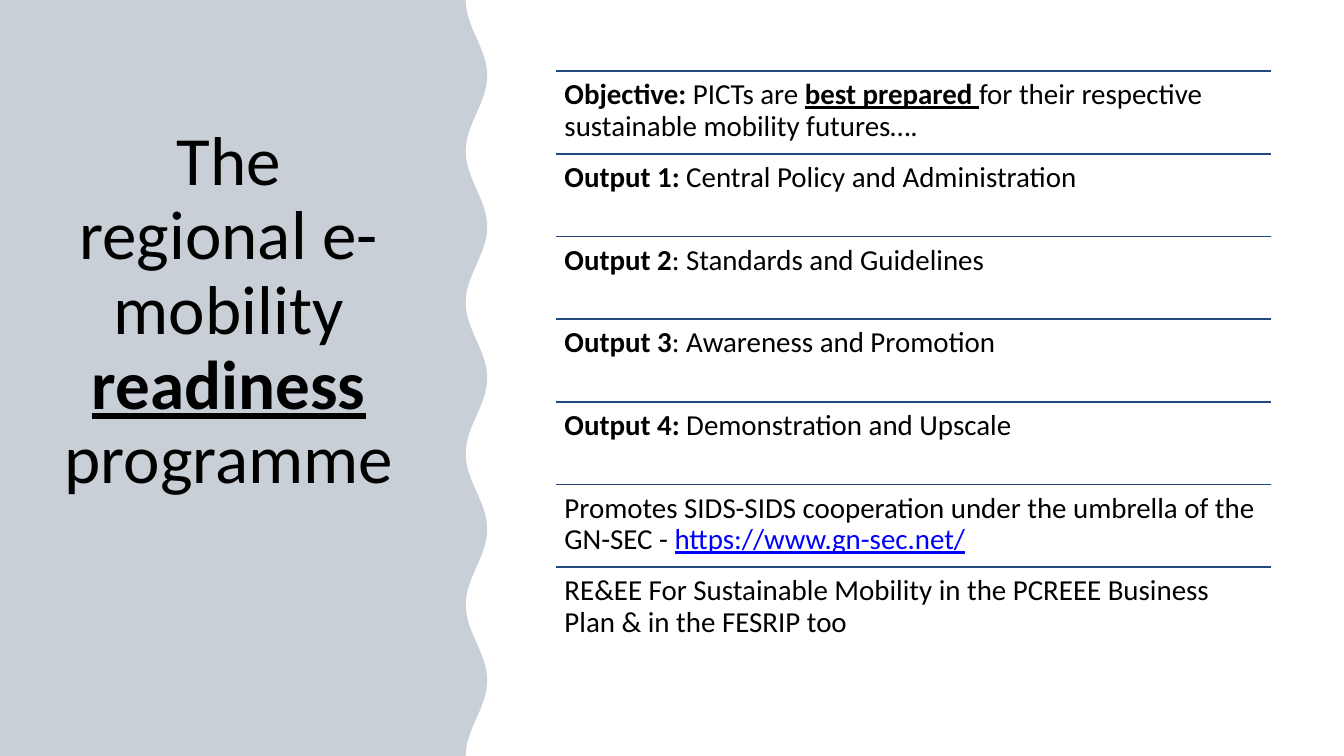
from math import cos, pi

from lxml import etree
from pptx import Presentation
from pptx.dml.color import RGBColor
from pptx.enum.shapes import MSO_CONNECTOR
from pptx.enum.text import MSO_ANCHOR, PP_ALIGN
from pptx.oxml.ns import qn
from pptx.util import Pt

STRAIGHT = MSO_CONNECTOR.STRAIGHT
BOTTOM = MSO_ANCHOR.BOTTOM
CENTER = PP_ALIGN.CENTER
LEFT = PP_ALIGN.LEFT

WHITE = RGBColor(0xFF, 0xFF, 0xFF)
BLACK = RGBColor(0x00, 0x00, 0x00)
NAVY = RGBColor(0x25, 0x40, 0x61)
RULE_BLUE = RGBColor(0x1F, 0x49, 0x7D)
LINK_BLUE = RGBColor(0x00, 0x00, 0xFF)

SLIDE_WIDTH, SLIDE_HEIGHT = 1440, 810
WAVE_PERIOD, WAVE_DEPTH, WAVE_STEP = 162, 23, 6
ROW_LEFT, ROW_TOP, ROW_WIDTH, ROW_HEIGHT = 595.44, 76.32, 766.8, 88.56
ROW_INSET = 9.36

STYLES = {
    "plain": (False, False, BLACK),
    "bold": (True, False, BLACK),
    "strong": (True, True, BLACK),
    "link": (False, True, LINK_BLUE),
}

TITLE = [("The regional e-mobility ", "plain"), ("readiness", "strong"), (" programme", "plain")]

ROWS = [
    [("Objective:", "bold"), (" PICTs are ", "plain"), ("best prepared ", "strong"),
     ("for their respective sustainable mobility futures….", "plain")],
    [("Output 1:", "bold"), (" Central Policy and Administration", "plain")],
    [("Output 2", "bold"), (": Standards and Guidelines", "plain")],
    [("Output 3", "bold"), (": Awareness and Promotion", "plain")],
    [("Output 4:", "bold"), (" Demonstration and Upscale", "plain")],
    [("Promotes SIDS-SIDS cooperation under the umbrella of the GN-SEC - ", "plain"),
     ("https://www.gn-sec.net/", "link")],
    [("RE&EE For Sustainable Mobility in the PCREEE Business Plan & in the FESRIP too", "plain")],
]


def write_spans(para, spans, size, align):
    para.alignment = align
    para.line_spacing = 0.9
    for text, style in spans:
        span = para.add_run()
        span.text = text
        span.font.name = "Calibri"
        span.font.size = Pt(size)
        span.font.bold, span.font.underline, span.font.color.rgb = STYLES[style]


deck = Presentation()
deck.slide_width, deck.slide_height = Pt(SLIDE_WIDTH), Pt(SLIDE_HEIGHT)
page = deck.slides.add_slide(deck.slide_layouts[6])

for trough, color, opacity in [(499, WHITE, 100), (482, WHITE, 100), (499, NAVY, 25)]:
    edge = [
        (Pt(trough + WAVE_DEPTH / 2 * (1 - cos(2 * pi * y / WAVE_PERIOD))), Pt(y))
        for y in range(0, SLIDE_HEIGHT + 1, WAVE_STEP)
    ]
    outline = page.shapes.build_freeform(0, 0)
    outline.add_line_segments(edge + [(0, Pt(SLIDE_HEIGHT))], close=True)
    panel = outline.convert_to_shape()
    panel.shadow.inherit = False
    panel.line.fill.background()
    panel.fill.solid()
    panel.fill.fore_color.rgb = color
    if opacity < 100:
        tint = panel.fill._xPr.find(".//" + qn("a:srgbClr"))
        etree.SubElement(tint, qn("a:alpha")).set("val", str(opacity * 1000))

title = page.shapes.add_textbox(Pt(54), Pt(85.68), Pt(382.32), Pt(452.16))
title.text_frame.word_wrap = True
title.text_frame.vertical_anchor = BOTTOM
write_spans(title.text_frame.paragraphs[0], TITLE, 74, CENTER)

outputs = page.shapes.add_group_shape()
for index, spans in enumerate(ROWS):
    top = ROW_TOP + index * ROW_HEIGHT
    rule = outputs.shapes.add_connector(
        STRAIGHT, Pt(ROW_LEFT), Pt(top), Pt(ROW_LEFT + ROW_WIDTH), Pt(top))
    rule.line.color.rgb = RULE_BLUE
    rule.line.width = Pt(2)
    etree.SubElement(rule._element.spPr, qn("a:effectLst"))

    box = outputs.shapes.add_textbox(Pt(ROW_LEFT), Pt(top), Pt(ROW_WIDTH), Pt(ROW_HEIGHT))
    frame = box.text_frame
    frame.word_wrap = True
    frame.margin_left = frame.margin_right = Pt(ROW_INSET)
    frame.margin_top = frame.margin_bottom = Pt(ROW_INSET)
    write_spans(frame.paragraphs[0], spans, 31, LEFT)

deck.save("out.pptx")
